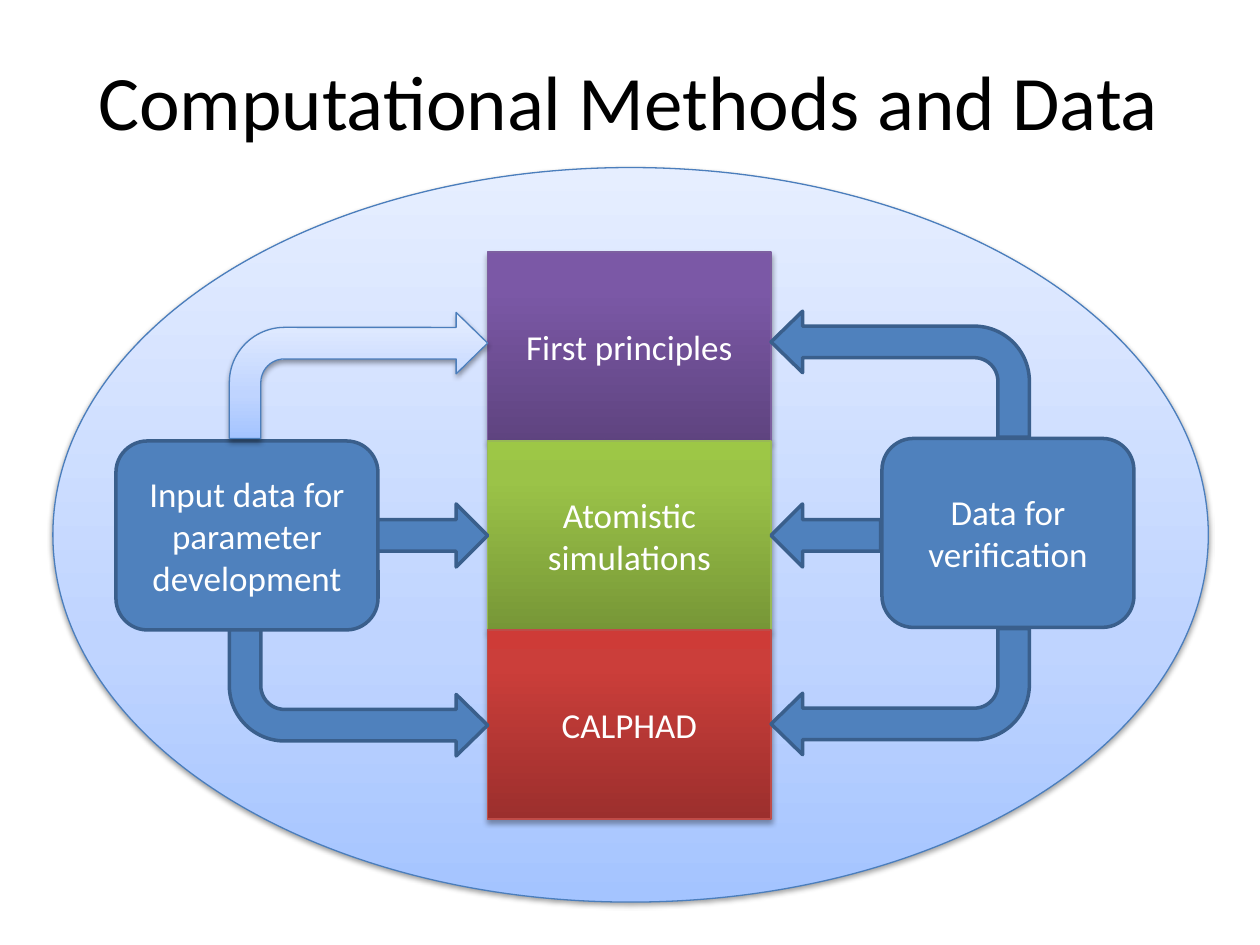
from lxml.etree import SubElement as Sub
from pptx import Presentation
from pptx.dml.color import RGBColor
from pptx.enum.shapes import MSO_SHAPE as Kind
from pptx.enum.text import MSO_ANCHOR as Anchor, PP_ALIGN as Align
from pptx.oxml import parse_xml
from pptx.oxml.ns import nsdecls, qn
from pptx.util import Inches, Pt

deck = Presentation()
deck.slide_width, deck.slide_height = Inches(10), Inches(7.5)
slide = deck.slides.add_slide(deck.slide_layouts[6])
shapes = slide.shapes


def write(box, text, size=20, hue="FFFFFF"):
    frame = box.text_frame
    frame.word_wrap = True
    frame.vertical_anchor = Anchor.MIDDLE
    para = frame.paragraphs[0]
    para.alignment = Align.CENTER
    run = para.add_run()
    run.text = text
    run.font.name = "Calibri"
    run.font.size = Pt(size)
    run.font.color.rgb = RGBColor.from_string(hue)


def draw(kind, at, fill="4F81BD", line="3A5F8C", wide=2, stops=None, fade=38, drop=1.6, flip=""):
    shape = shapes.add_shape(kind, *map(Inches, at))
    shape.shadow.inherit = False
    shape.line.color.rgb = RGBColor.from_string(line)
    shape.line.width = Pt(wide)
    props = shape._element.spPr
    for axis in flip:
        props.xfrm.set("flip" + axis, "1")
    if stops:
        marks = "".join(
            f'<a:gs pos="{pos * 1000}"><a:srgbClr val="{hue}"/></a:gs>' for pos, hue in stops)
        props.insert(2, parse_xml(
            f'<a:gradFill {nsdecls("a")} rotWithShape="1"><a:gsLst>{marks}</a:gsLst>'
            '<a:lin ang="16200000" scaled="0"/></a:gradFill>'))
        cast = Sub(props.find(qn("a:effectLst")), qn("a:outerShdw"), blurRad=str(Pt(3.1)),
                   dist=str(Pt(drop)), dir="5400000", rotWithShape="0")
        tint = Sub(cast, qn("a:srgbClr"), val="000000")
        Sub(tint, qn("a:alpha"), val=str(fade * 1000))
    else:
        shape.fill.solid()
        shape.fill.fore_color.rgb = RGBColor.from_string(fill)
    return shape


pale = dict(stops=[(0, "A4C4FF"), (35, "BFD4FF"), (100, "E6EEFF")], line="4B7EBC", wide=0.75)
draw(Kind.OVAL, (0.42, 1.33, 9.17, 5.83), **pale)

title = shapes.add_textbox(Inches(0.49), Inches(0.25), Inches(9), Inches(1.08))
write(title, "Computational Methods and Data", size=44, hue="000000")

write(draw(Kind.ROUNDED_RECTANGLE, (0.92, 3.5, 2.08, 1.5)), "Input data for parameter development")

methods = [
    ("First principles", "7D60A0", ("5F4480", "7B58A6", "7C57A8")),
    ("Atomistic simulations", "98B955", ("779737", "9BC348", "9DC746")),
    ("CALPHAD", "BF4C48", ("9C2F2D", "CB3E3A", "CE3B37")),
]
for row, (name, line, hues) in enumerate(methods):
    block = draw(Kind.RECTANGLE, (3.87, 2 + 1.5 * row, 2.25, 1.5), line=line, wide=0.75,
                 stops=list(zip((0, 80, 100), hues)), fade=35, drop=1.8)
    write(block, name)

write(draw(Kind.ROUNDED_RECTANGLE, (7, 3.48, 2, 1.5)), "Data for verification")

bends = [(1.82, 5, "V", {}), (1.82, 2.48, "", pale), (6.12, 2.47, "H", {}), (6.12, 4.99, "HV", {})]
for left, top, flip, look in bends:
    bend = draw(Kind.BENT_ARROW, (left, top, 2.05, 1), flip=flip, **look)
    for spot, value in enumerate((0.25, 0.244, 0.25, 0.438)):
        bend.adjustments[spot] = value

for left, flip in ((3, ""), (6.12, "H")):
    draw(Kind.RIGHT_ARROW, (left, 4, 0.87, 0.5), flip=flip)

deck.save("out.pptx")
